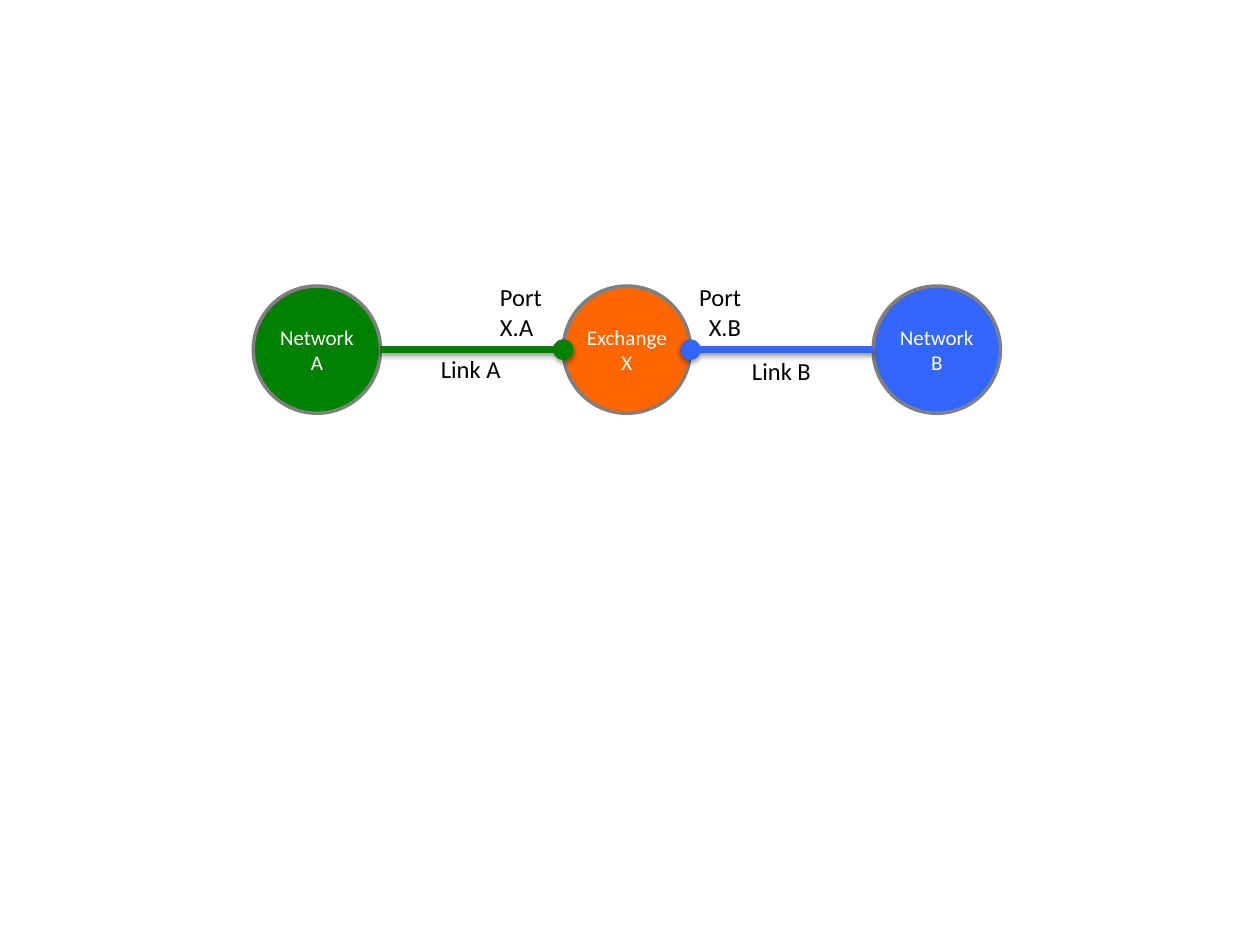
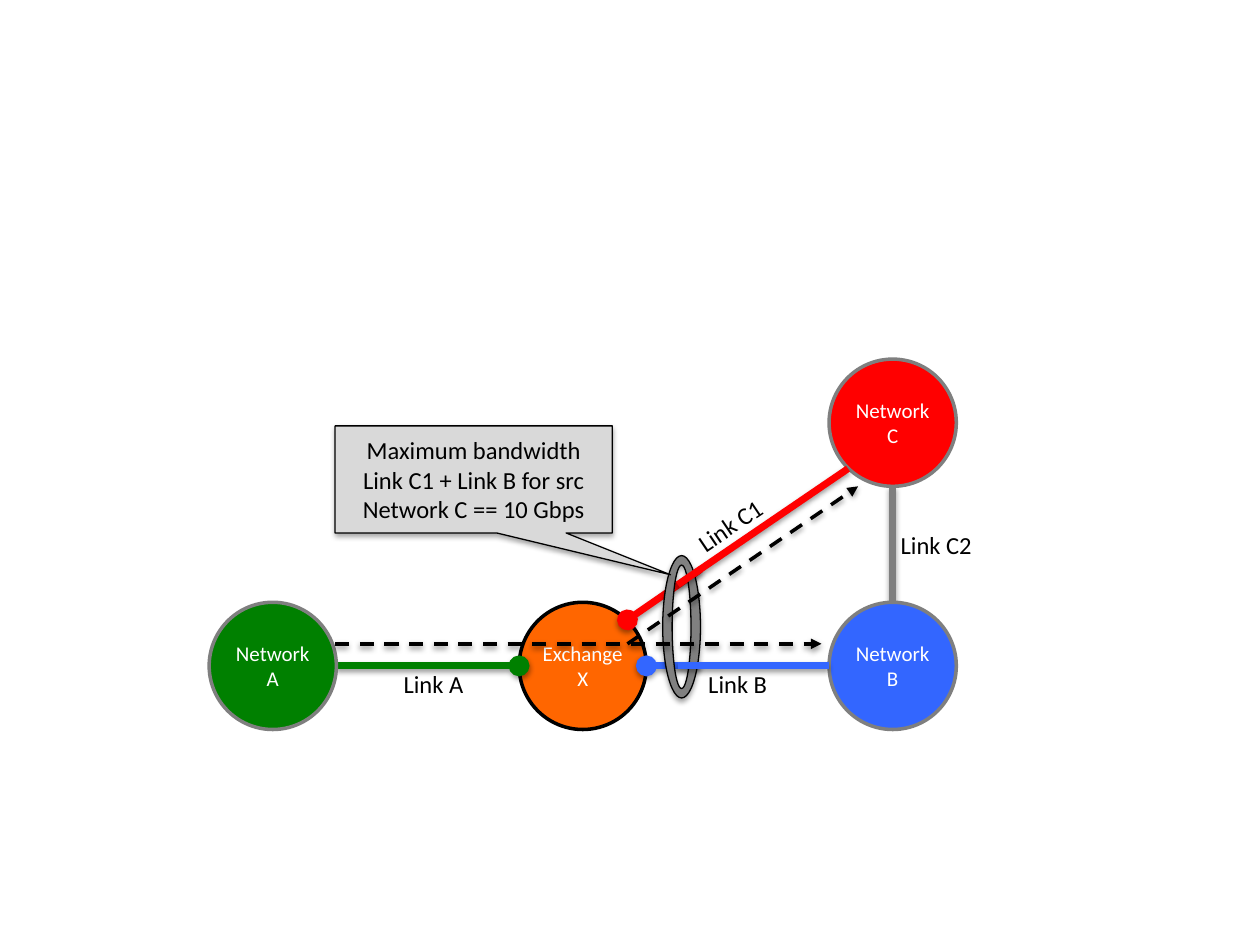
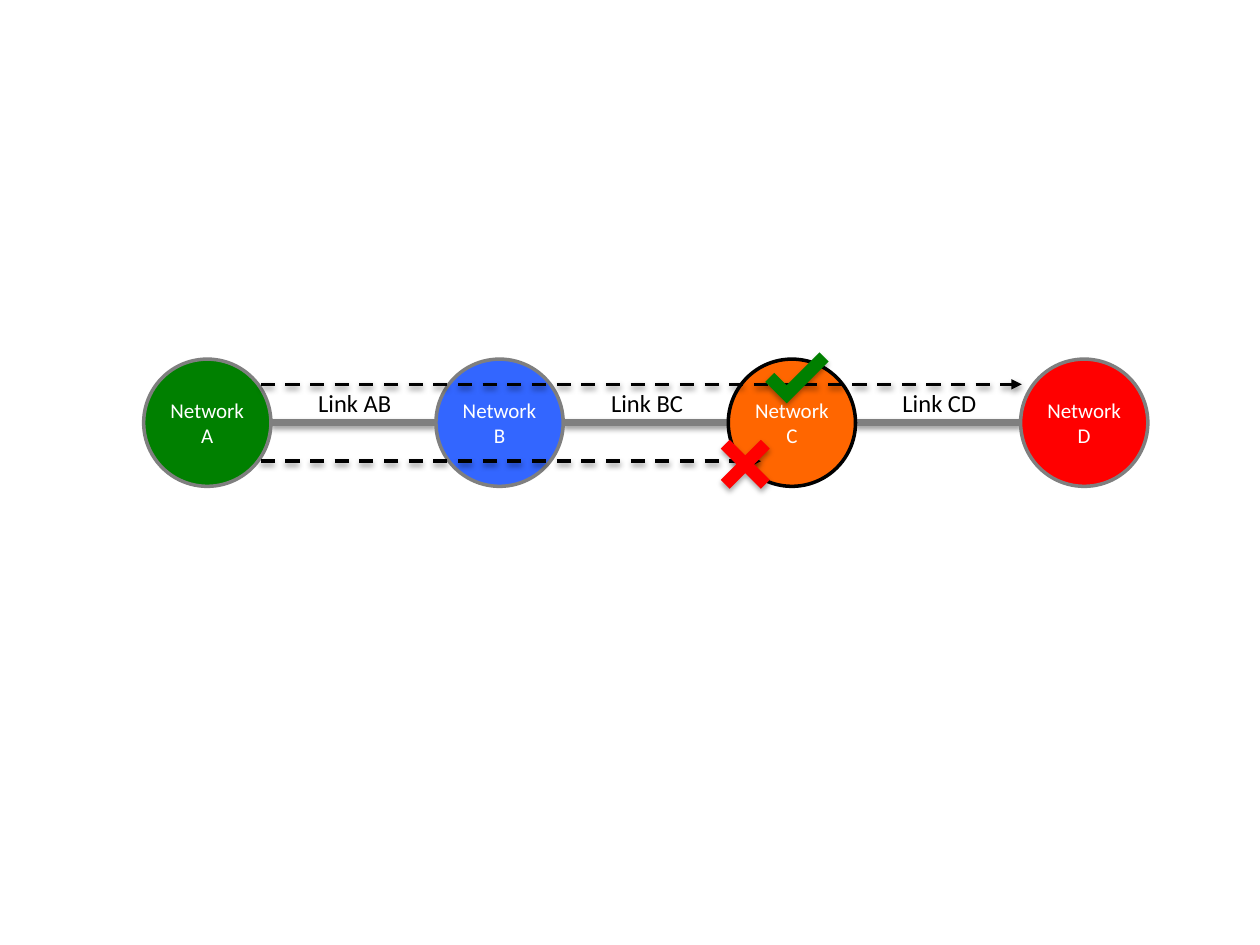
from lxml import etree
from pptx import Presentation
from pptx.dml.color import RGBColor
from pptx.enum.dml import MSO_LINE
from pptx.enum.shapes import MSO_CONNECTOR, MSO_SHAPE
from pptx.enum.text import MSO_ANCHOR, PP_ALIGN
from pptx.oxml.ns import qn
from pptx.util import Inches, Pt

ELLIPSE = MSO_SHAPE.OVAL
DONUT = MSO_SHAPE.DONUT
CALLOUT = MSO_SHAPE.RECTANGULAR_CALLOUT
CORNER = MSO_SHAPE.CORNER
PLUS = MSO_SHAPE.CROSS
STRAIGHT = MSO_CONNECTOR.STRAIGHT
DASH = MSO_LINE.DASH
LEFT, CENTER, RIGHT = PP_ALIGN.LEFT, PP_ALIGN.CENTER, PP_ALIGN.RIGHT
MIDDLE, TOP = MSO_ANCHOR.MIDDLE, MSO_ANCHOR.TOP

GREEN = RGBColor(0x00, 0x80, 0x00)
BLUE = RGBColor(0x33, 0x66, 0xFF)
ORANGE = RGBColor(0xFF, 0x66, 0x00)
RED = RGBColor(0xFF, 0x00, 0x00)
GRAY = RGBColor(0x7F, 0x7F, 0x7F)
RING_GRAY = RGBColor(0x80, 0x80, 0x80)
LIGHT_GRAY = RGBColor(0xD9, 0xD9, 0xD9)
BLACK = RGBColor(0x00, 0x00, 0x00)
WHITE = RGBColor(0xFF, 0xFF, 0xFF)

FONT = "Calibri"
NODE = 1.01
RADIUS = NODE / 2
LABEL_HEIGHT = 0.34


def write(frame, text, size=14, color=BLACK, align=CENTER, anchor=TOP, wrap=True):
    frame.text = text
    frame.word_wrap = wrap
    frame.vertical_anchor = anchor
    for paragraph in frame.paragraphs:
        paragraph.alignment = align
        for run in paragraph.runs:
            run.font.name = FONT
            run.font.size = Pt(size)
            run.font.color.rgb = color


def cast_shadow(effects, distance, opacity):
    shadow = etree.SubElement(
        effects, qn("a:outerShdw"), blurRad=str(Pt(3.1)), dist=str(Pt(distance)),
        dir="5400000", rotWithShape="0")
    tint = etree.SubElement(shadow, qn("a:srgbClr"), val=str(BLACK))
    etree.SubElement(tint, qn("a:alpha"), val=str(opacity * 1000))


def add_figure(slide, kind, box, fill, line=None, width=0.75, shadow=True,
               adjustments=(), rotation=0):
    figure = slide.shapes.add_shape(kind, *map(Inches, box))
    figure.rotation = rotation
    for index, value in enumerate(adjustments):
        figure.adjustments[index] = value
    figure.fill.solid()
    figure.fill.fore_color.rgb = fill
    if line is None:
        figure.line.fill.background()
    else:
        figure.line.color.rgb = line
        figure.line.width = Pt(width)
    figure.shadow.inherit = False
    if shadow:
        cast_shadow(figure._element.spPr.find(qn("a:effectLst")), 1.8, 35)
    return figure


def add_node(slide, left, top, text, fill, line=GRAY):
    node = add_figure(slide, ELLIPSE, (left, top, NODE, NODE), fill, line, 2, shadow=False)
    frame = node.text_frame
    frame.margin_left = frame.margin_right = frame.margin_top = frame.margin_bottom = 0
    write(frame, text, size=12, color=WHITE, anchor=MIDDLE)


def add_label(slide, left, top, width, text, height=LABEL_HEIGHT, rotation=0, **style):
    label = slide.shapes.add_textbox(*map(Inches, (left, top, width, height)))
    label.rotation = rotation
    write(label.text_frame, text, **style)


def add_link(slide, start, end, color, width=4, dash=None, head=None, tail=None):
    link = slide.shapes.add_connector(STRAIGHT, *map(Inches, (*start, *end)))
    link.line.color.rgb = color
    link.line.width = Pt(width)
    if dash:
        link.line.dash_style = dash
    outline = link.line._get_or_add_ln()
    for tag, ending in (("a:headEnd", head), ("a:tailEnd", tail)):
        if ending:
            etree.SubElement(outline, qn(tag), type=ending)
    cast_shadow(etree.SubElement(link._element.spPr, qn("a:effectLst")), 1.6, 38)


def add_flow(slide, start, end):
    add_link(slide, start, end, BLACK, width=2, dash=DASH, tail="triangle")


def build_exchange_ports(slide):
    top = 2.27
    middle = top + RADIUS
    network_a, exchange, network_b = (2.01 + 2.46 * i for i in range(3))
    add_label(slide, 3.4, 2.76, 0.68, "Link A", align=LEFT, wrap=False)
    add_node(slide, network_a, top, "Network\nA", GREEN)
    add_node(slide, network_b, top, "Network\nB", BLUE)
    add_node(slide, exchange, top, "Exchange\nX", ORANGE)
    add_link(slide, (network_a + NODE, middle), (exchange, middle), GREEN, tail="oval")
    add_link(slide, (network_b, middle), (exchange + NODE, middle), BLUE, tail="oval")
    add_label(slide, 5.87, 2.78, 0.67, "Link B", align=LEFT, wrap=False)
    add_label(slide, 3.87, 2.19, 0.74, "Port X.A", height=0.57, align=LEFT)
    add_label(slide, 5.33, 2.19, 0.65, "Port X.B", height=0.57, align=RIGHT)


def build_shared_bandwidth(slide):
    upper, lower = 2.85, 4.78
    middle = lower + RADIUS
    flow_y = 5.11
    network_a, exchange, network_b = (1.66 + 2.46 * i for i in range(3))
    b_center = network_b + RADIUS
    add_label(slide, 3.1, 5.26, 0.68, "Link A", wrap=False)
    add_node(slide, exchange, lower, "Exchange\nX", ORANGE, line=BLACK)
    add_label(slide, 5.52, 5.26, 0.67, "Link B", wrap=False)
    add_label(slide, 5.41, 4, 0.77, "Link C1", rotation=326, wrap=False)
    add_label(slide, 7.05, 4.16, 0.77, "Link C2", align=LEFT, wrap=False)
    add_link(slide, (b_center, lower), (b_center, upper + NODE), GRAY)
    add_link(slide, (network_a + NODE, middle), (exchange, middle), GREEN, tail="oval")
    add_node(slide, network_a, lower, "Network\nA", GREEN)
    add_link(slide, (exchange + NODE, middle), (5.56, middle), BLUE, head="oval")
    add_link(slide, (4.98, 4.92), (5.56, 4.52), RED, head="oval")
    add_node(slide, network_b, upper, "Network\nC", RED)
    add_node(slide, network_b, lower, "Network\nB", BLUE)
    add_figure(slide, DONUT, (5.26, 4.41, 0.3, 1.13), RING_GRAY, BLACK)
    add_link(slide, (5.38, 4.64), (6.73, 3.72), RED)
    add_link(slide, (5.38, middle), (network_b, middle), BLUE)
    limit = add_figure(slide, CALLOUT, (2.66, 3.38, 2.2, 0.85), LIGHT_GRAY, BLACK,
                       adjustments=(0.71, 0.89))
    write(limit.text_frame, "Maximum bandwidth Link C1 + Link B for src Network C == 10 Gbps",
          anchor=MIDDLE)
    add_flow(slide, (2.66, flow_y), (6.52, flow_y))
    add_flow(slide, (4.98, flow_y), (6.81, 3.86))


def build_network_chain(slide):
    top = 2.85
    middle = top + RADIUS
    pitch = 2.32
    networks = (("A", GREEN, GRAY), ("B", BLUE, GRAY), ("C", ORANGE, BLACK), ("D", RED, GRAY))
    lefts = [1.14 + pitch * i for i in range(len(networks))]
    for i, name in enumerate(("Link AB", "Link BC", "Link CD")):
        add_label(slide, 2.42 + pitch * i, 3.03, 0.79, name, wrap=False)
        add_link(slide, (lefts[i] + NODE, middle), (lefts[i + 1], middle), GRAY)
    for left, (letter, fill, line) in zip(lefts, networks):
        add_node(slide, left, top, f"Network\n{letter}", fill, line)
    add_flow(slide, (2.07, 3.05), (8.11, 3.05))
    add_flow(slide, (2.07, 3.66), (6.04, 3.66))
    add_figure(slide, CORNER, (6.09, 2.83, 0.47, 0.24), GREEN,
               adjustments=(0.42, 0.42), rotation=315)
    add_figure(slide, PLUS, (5.69, 3.46, 0.45, 0.45), RED, adjustments=(0.39,), rotation=45)


def main():
    deck = Presentation()
    deck.slide_width, deck.slide_height = Inches(10), Inches(7.5)
    blank = deck.slide_layouts[6]
    for build in (build_exchange_ports, build_shared_bandwidth, build_network_chain):
        build(deck.slides.add_slide(blank))
    deck.save("out.pptx")


if __name__ == "__main__":
    main()
